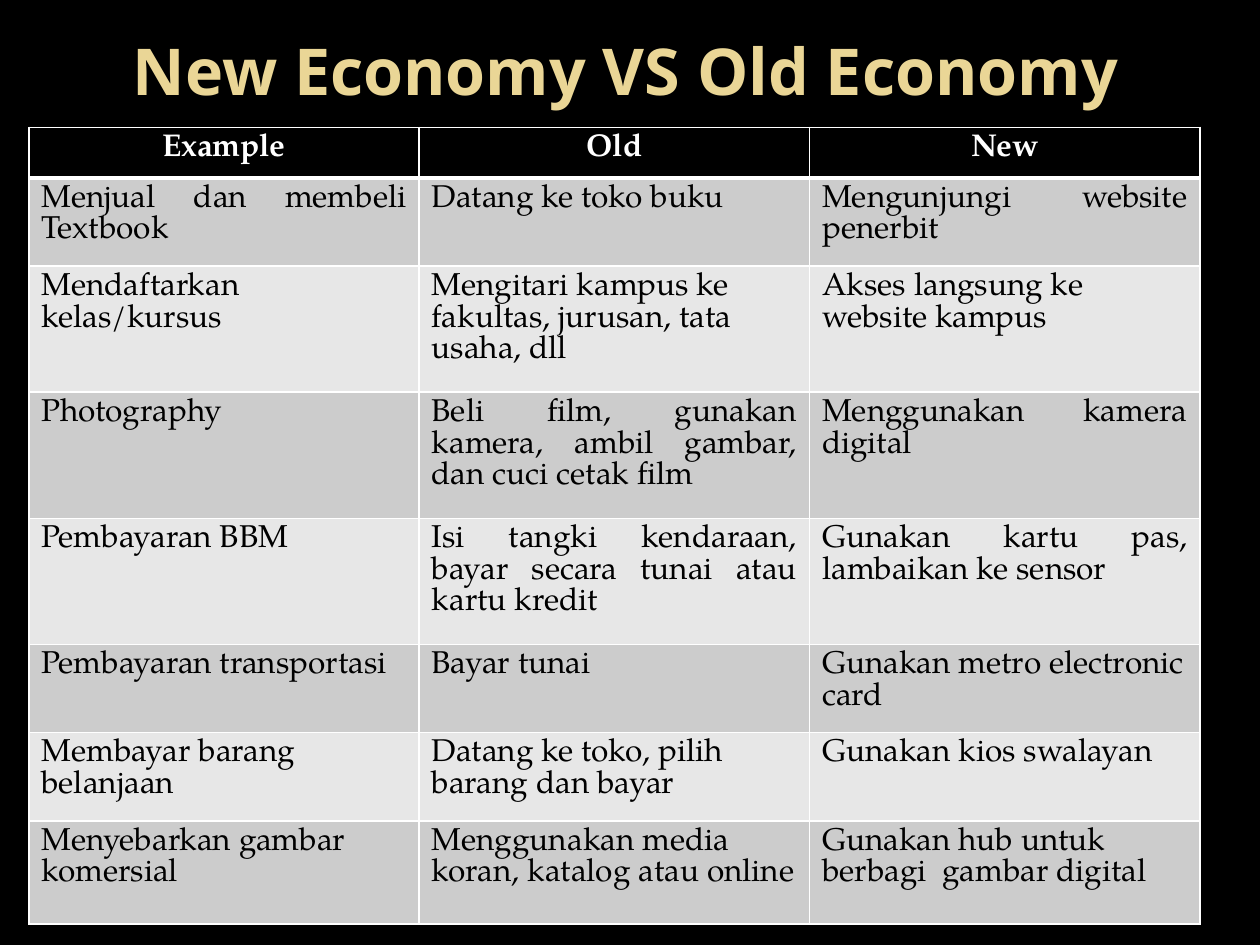
from lxml import etree
from pptx import Presentation
from pptx.dml.color import RGBColor
from pptx.enum.text import MSO_ANCHOR, PP_ALIGN
from pptx.oxml.ns import qn
from pptx.util import Cm, Pt

LEFT, MID, JUST = PP_ALIGN.LEFT, PP_ALIGN.CENTER, PP_ALIGN.JUSTIFY
ALIGNS = {"l": LEFT, "j": JUST}


class Theme:
    back = "000000"
    gold = "EAD696"
    white = "FFFFFF"
    ink = "000000"
    bands = ("CCCCCC", "E7E7E7")
    head_font = "Open Sans"
    body_font = "TeX Gyre Pagella"
    head_size = 36.9
    body_size = 18
    thin = 1
    thick = 3


HEADS = ("Example", "Old", "New")
ROWS = (
    ("jlj", 1.75, "Menjual dan membeli Textbook", "Datang ke toko buku",
     "Mengunjungi website penerbit"),
    ("lll", 2.51, "Mendaftarkan kelas/kursus",
     "Mengitari kampus ke fakultas, jurusan, tata usaha, dll",
     "Akses langsung ke website kampus"),
    ("ljj", 2.51, "Photography",
     "Beli film, gunakan kamera, ambil gambar, dan cuci cetak film",
     "Menggunakan kamera digital"),
    ("ljj", 2.51, "Pembayaran BBM",
     "Isi tangki kendaraan, bayar secara tunai atau kartu kredit",
     "Gunakan kartu pas, lambaikan ke sensor"),
    ("lll", 1.75, "Pembayaran transportasi", "Bayar tunai",
     "Gunakan metro electronic card"),
    ("lll", 1.75, "Membayar barang belanjaan",
     "Datang ke toko, pilih barang dan bayar", "Gunakan kios swalayan"),
    ("lll", 2.08, "Menyebarkan gambar komersial",
     "Menggunakan media koran, katalog atau online",
     "Gunakan hub untuk berbagi  gambar digital"),
)


def write(frame, text, *, font, size, color, bold=False, align=LEFT):
    para = frame.paragraphs[0]
    para.alignment = align
    run = para.add_run()
    run.text = text
    run.font.name = font
    run.font.size = Pt(size)
    run.font.bold = bold
    run.font.color.rgb = RGBColor.from_string(color)


def edge(cell, side, width, color):
    props = cell._tc.get_or_add_tcPr()
    line = etree.SubElement(props, qn(f"a:ln{side}"), w=str(Pt(width)))
    fill = etree.SubElement(line, qn("a:solidFill"))
    etree.SubElement(fill, qn("a:srgbClr"), val=color)


class Deck:
    def __init__(self, theme):
        self.theme = theme
        self.show = Presentation()
        self.show.slide_width = Cm(25.4)
        self.show.slide_height = Cm(19.05)
        self.slide = self.show.slides.add_slide(self.show.slide_layouts[6])
        fill = self.slide.background.fill
        fill.solid()
        fill.fore_color.rgb = RGBColor.from_string(theme.back)

    def title(self, text, left, top, width, height):
        box = self.slide.shapes.add_textbox(
            Cm(left), Cm(top), Cm(width), Cm(height))
        frame = box.text_frame
        frame.word_wrap = True
        frame.vertical_anchor = MSO_ANCHOR.MIDDLE
        look = self.theme
        write(frame, text, font=look.head_font, size=look.head_size,
              color=look.gold, bold=True, align=MID)

    def cell(self, cell, text, fill, top, base, **form):
        look = self.theme
        for side, width in zip("LRTB", (look.thin, look.thin, top, base)):
            edge(cell, side, width, look.white)
        cell.fill.solid()
        cell.fill.fore_color.rgb = RGBColor.from_string(fill)
        write(cell.text_frame, text, font=look.body_font,
              size=look.body_size, **form)

    def table(self, heads, rows, left, top, col, first):
        look = self.theme
        highs = [first] + [row[1] for row in rows]
        grid = self.slide.shapes.add_table(
            len(highs), len(heads), Cm(left), Cm(top),
            Cm(col * len(heads)), Cm(sum(highs))).table
        grid.first_row = grid.horz_banding = False
        for row, high in zip(grid.rows, highs):
            row.height = Cm(high)
        for x, head in enumerate(heads):
            grid.columns[x].width = Cm(col)
            self.cell(grid.cell(0, x), head, look.back, look.thin, look.thick,
                      color=look.white, bold=True, align=MID)
        for y, (aligns, _, *texts) in enumerate(rows):
            over = look.thin if y else look.thick
            for x, (key, text) in enumerate(zip(aligns, texts)):
                self.cell(grid.cell(y + 1, x), text, look.bands[y % 2],
                          over, look.thin, color=look.ink, align=ALIGNS[key])


def main():
    deck = Deck(Theme)
    deck.title("New Economy VS Old Economy", 1.19, 0.41, 22.86, 2.01)
    deck.table(HEADS, ROWS, left=0.58, top=2.57, col=7.87, first=0.99)
    deck.show.save("out.pptx")


if __name__ == "__main__":
    main()
